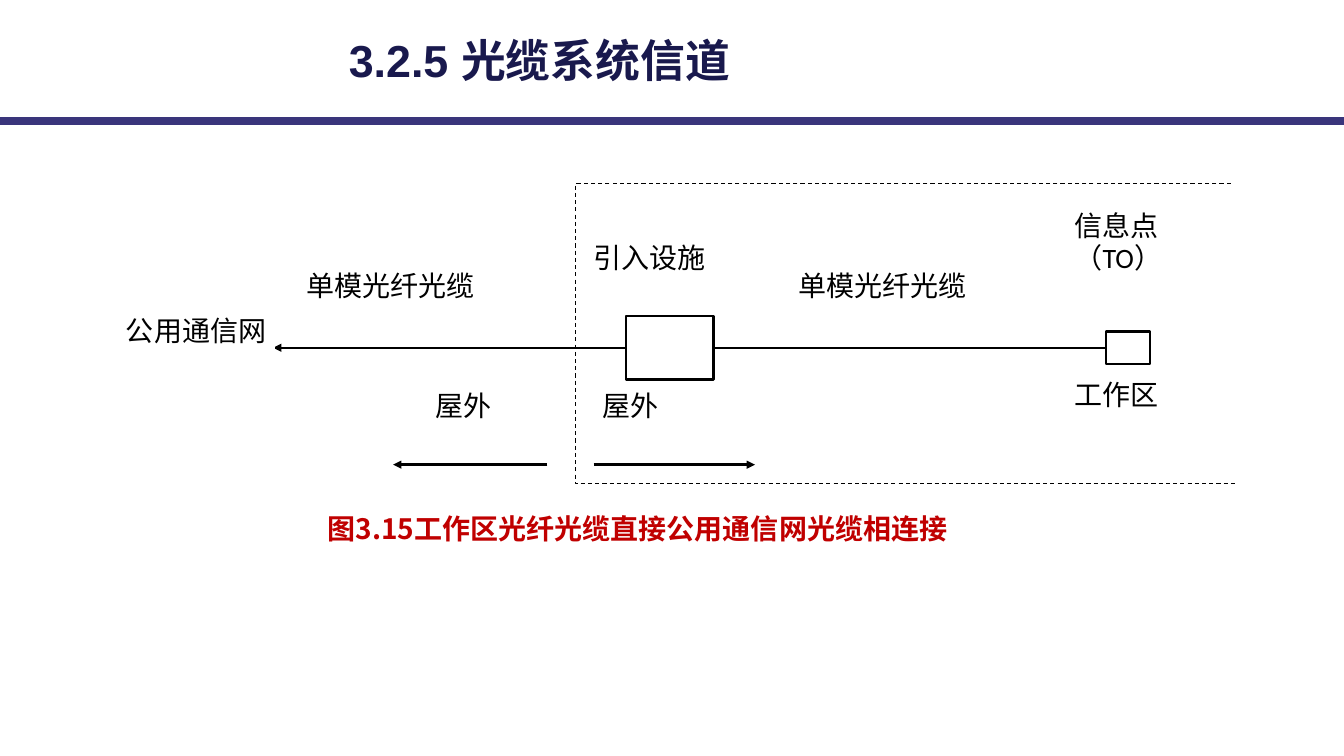
import pptx
import pptx.util
import pptx.dml.color
import pptx.enum.dml
import pptx.enum.shapes
import pptx.enum.text
import pptx.oxml
import pptx.oxml.ns

ALIGN = pptx.enum.text.PP_ALIGN
ANCHOR = pptx.enum.text.MSO_ANCHOR
COLS, ROWS = 133.33, 75  # grid cells of a tenth of an inch


def rgb(value):
    return pptx.dml.color.RGBColor.from_string(value)


class Diagram:
    INK, PAPER, NAVY, BAR, RED = "000000", "FFFFFF", "19194D", "3A357B", "C00000"
    LATIN, CJK = "Calibri", "Noto Sans CJK SC"
    STROKE = 1.75

    def __init__(self, prs):
        self.col = prs.slide_width / COLS
        self.row = prs.slide_height / ROWS
        self.slide = prs.slides.add_slide(prs.slide_layouts[5])
        self.shapes = self.slide.shapes

    def x(self, cols):
        return round(cols * self.col)

    def y(self, rows):
        return round(rows * self.row)

    def place(self, left, top, width, height):
        return self.x(left), self.y(top), self.x(width), self.y(height)

    def stroke(self, line, color, width):
        line.color.rgb = rgb(color)
        line.width = pptx.util.Pt(width)

    def set_text(self, sp, text, size, color, font, bold, align, spacing=None):
        tf = sp.text_frame
        tf.text = text
        tf.word_wrap = True
        for p in tf.paragraphs:
            p.alignment = align
            p.line_spacing = spacing
            for r in p.runs:
                r.font.size = pptx.util.Pt(size)
                r.font.bold = bold
                r.font.color.rgb = rgb(color)
                r.font.name = font
                ea = pptx.oxml.parse_xml(
                    f'<a:ea {pptx.oxml.ns.nsdecls("a")} typeface="{self.CJK}"/>')
                r._r.get_or_add_rPr().append(ea)
        return tf

    def title(self, text, *box):
        sp = self.shapes.title
        sp.left, sp.top, sp.width, sp.height = self.place(*box)
        tf = self.set_text(sp, text, 32, self.NAVY, "Arial", True, ALIGN.LEFT)
        tf.vertical_anchor = ANCHOR.MIDDLE

    def box(self, *box, line=INK, width=STROKE):
        sp = self.shapes.add_shape(
            pptx.enum.shapes.MSO_SHAPE.RECTANGLE, *self.place(*box))
        sp.shadow.inherit = False
        sp.fill.solid()
        sp.fill.fore_color.rgb = rgb(self.PAPER)
        self.stroke(sp.line, line, width)
        return sp

    def label(self, text, *box, color=INK, font=LATIN, bold=False,
              align=ALIGN.JUSTIFY, spacing=None):
        sp = self.box(*box, line=self.PAPER, width=0.75)
        tf = self.set_text(sp, text, 20, color, font, bold, align, spacing)
        tf.margin_left = tf.margin_right = tf.margin_top = tf.margin_bottom = 0
        tf.vertical_anchor = ANCHOR.TOP

    def line(self, x1, y1, x2, y2, color=INK, width=STROKE, arrow=False):
        cx = self.shapes.add_connector(
            pptx.enum.shapes.MSO_CONNECTOR.STRAIGHT,
            self.x(x1), self.y(y1), self.x(x2), self.y(y2))
        self.stroke(cx.line, color, width)
        ns = pptx.oxml.ns.nsdecls("a")
        props = cx._element.spPr
        if arrow:
            props.find(pptx.oxml.ns.qn("a:ln")).append(
                pptx.oxml.parse_xml(f'<a:tailEnd {ns} type="triangle"/>'))
        props.append(pptx.oxml.parse_xml(f"<a:effectLst {ns}/>"))
        return cx

    def dashed_path(self, start, *points):
        fb = self.shapes.build_freeform(self.x(start[0]), self.y(start[1]))
        fb.add_line_segments([(self.x(a), self.y(b)) for a, b in points], close=False)
        sp = fb.convert_to_shape()
        sp.shadow.inherit = False
        sp.fill.background()
        self.stroke(sp.line, self.INK, 0.75)
        sp.line.dash_style = pptx.enum.dml.MSO_LINE.DASH


def main():
    prs = pptx.Presentation()
    prs.slide_width = pptx.util.Inches(13.33)
    prs.slide_height = pptx.util.Inches(7.5)
    d = Diagram(prs)

    # Header
    d.title("3.2.5 光缆系统信道", 33.6, 2.8, 70.6, 6.3)
    d.line(0, 12, COLS, 12, color=d.BAR, width=5.75)

    # Entrance facility and outlet, centred on the cable
    axis = 34.5
    entrance = d.box(62.1, axis - 3.15, 8.7, 6.3)
    outlet = d.box(109.7, axis - 1.6, 4.4, 3.2)
    to_network = d.line(62.1, axis, 27.1, axis, arrow=True)
    to_network.begin_connect(entrance, 1)
    to_outlet = d.line(70.8, axis, 109.7, axis)
    to_outlet.begin_connect(entrance, 3)
    to_outlet.end_connect(outlet, 1)

    # Direction arrows
    for start, end in ((54.3, 39), (58.9, 74.9)):
        d.line(start, 46.1, end, 46.1, arrow=True)

    # Labels
    for text, *box in (
        ("信息点\n（TO）", 106.6, 20.9, 15.1, 11.7),
        ("公用通信网", 12.5, 31.3, 14.7, 5),
        ("单模光纤光缆", 30.4, 26.9, 25.7, 5.9),
        ("单模光纤光缆", 79.2, 26.9, 25.7, 5.9),
        ("工作区", 106.6, 37.7, 17.1, 5.9),
    ):
        d.label(text, *box, spacing=0.96)
    for text, *box in (
        ("引入设施", 58.9, 23.9, 16.4, 6),
        ("屋外", 43.2, 38.5, 9.8, 7.2),
        ("屋外", 59.8, 38.5, 9.8, 7.2),
    ):
        d.label(text, *box)

    # Building outline and caption
    d.dashed_path((122.1, 18.2), (57.1, 18.2), (57.1, 48), (122.8, 48))
    d.label("图3.15工作区光纤光缆直接公用通信网光缆相连接", 14.9, 50.7, 96.7, 8.5,
            color=d.RED, font=d.CJK, bold=True, align=ALIGN.CENTER)

    prs.save("out.pptx")


if __name__ == "__main__":
    main()
